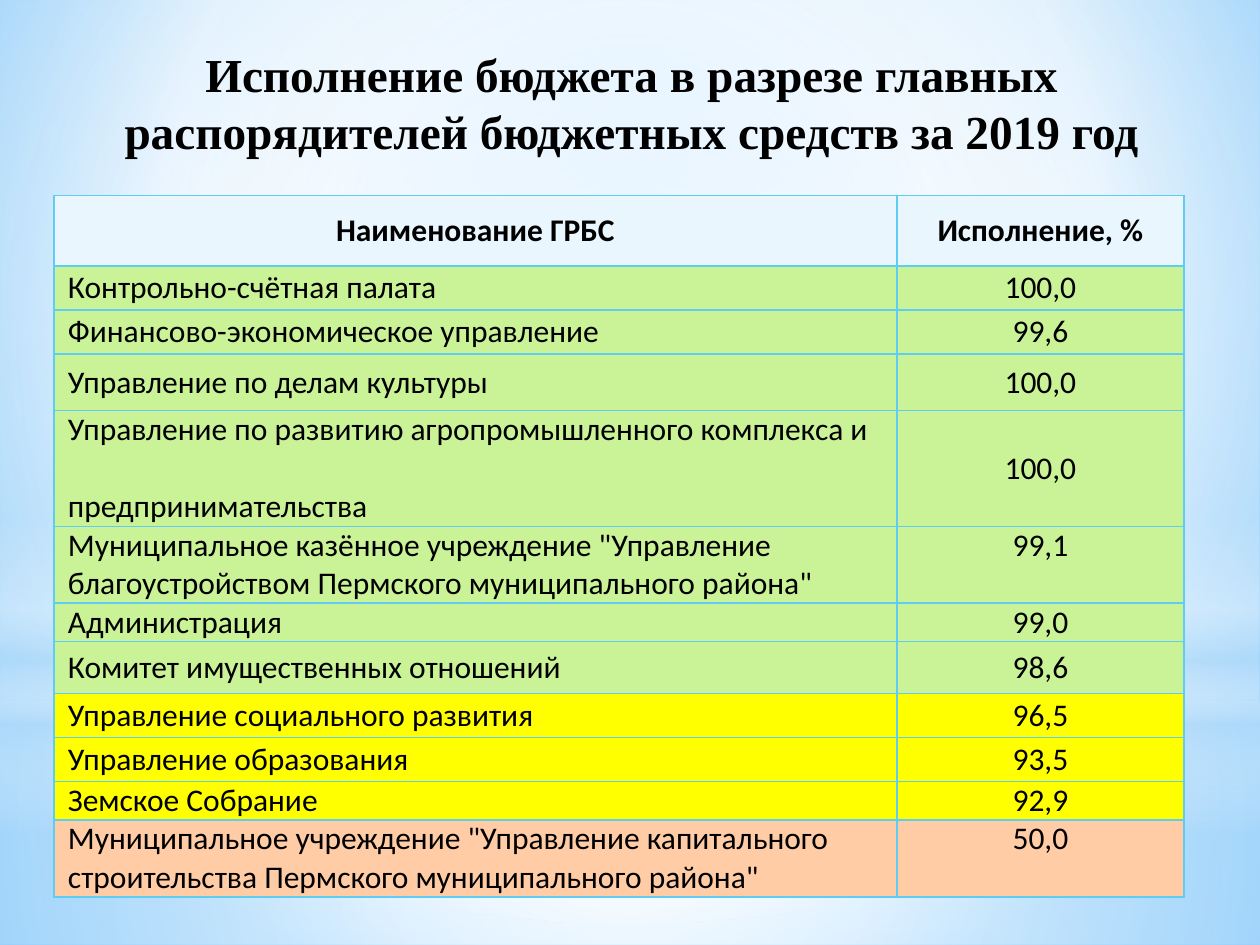
from lxml import etree
from pptx import Presentation
from pptx.dml.color import RGBColor
from pptx.enum.shapes import MSO_SHAPE as Shape
from pptx.enum.text import MSO_ANCHOR as Anchor, PP_ALIGN as Align
from pptx.oxml import parse_xml
from pptx.oxml.ns import nsdecls, qn
from pptx.util import Cm, Pt

BLACK = RGBColor(0x00, 0x00, 0x00)
WHITE = RGBColor(0xFF, 0xFF, 0xFF)
PALE_BLUE = RGBColor(0xB4, 0xDC, 0xFA)
SKY = RGBColor(0x9E, 0xD5, 0xFF)
DEEP_SKY = RGBColor(0x5B, 0xB9, 0xFF)
BORDER = RGBColor(0x5E, 0xCC, 0xF3)
HEADER = RGBColor(0xEA, 0xF6, 0xFD)
GREEN = RGBColor(0xCA, 0xF2, 0x97)
YELLOW = RGBColor(0xFF, 0xFF, 0x00)
ORANGE = RGBColor(0xFF, 0xCC, 0xA6)

CENTRE = (50, 50, 50, 50)
# Gradient stops: position %, colour, opacity %
BACKGROUND = [(0, SKY, 100), (60, WHITE, 100), (100, DEEP_SKY, 100)]
# Shape, top and height in cm, stops, focus (None for a vertical gradient)
LAYERS = [
    (Shape.RECTANGLE, 14.17, 4.88,
     [(0, WHITE, 91), (37, WHITE, 76), (100, PALE_BLUE, 79)], CENTRE),
    (Shape.RECTANGLE, 0, 14.17,
     [(0, WHITE, 89), (48, WHITE, 62), (100, PALE_BLUE, 79)], CENTRE),
    (Shape.RECTANGLE, 10.46, 6.35,
     [(0, WHITE, 0), (29, WHITE, 30), (45, PALE_BLUE, 40),
      (55, WHITE, 26), (65, PALE_BLUE, 60), (100, WHITE, 0)], None),
    (Shape.OVAL, 4.45, 14.17, [(0, WHITE, 100), (56, WHITE, 0)], CENTRE),
]

TITLE = "Исполнение бюджета в разрезе главных распорядителей бюджетных средств за 2019 год"
COLUMNS = (16.99, 5.79)
# Row height in cm, fill, name, value
ROWS = [
    (1.42, HEADER, "Наименование ГРБС", "Исполнение, %"),
    (0.89, GREEN, "Контрольно-счётная палата", "100,0"),
    (0.89, GREEN, "Финансово-экономическое управление", "99,6"),
    (1.14, GREEN, "Управление по делам культуры", "100,0"),
    (2.33, GREEN, "Управление по развитию агропромышленного комплекса и\n"
                  "предпринимательства", "100,0"),
    (1.55, GREEN, 'Муниципальное казённое учреждение "Управление\n'
                  'благоустройством Пермского муниципального района"', "99,1"),
    (0.77, GREEN, "Администрация", "99,0"),
    (1.05, GREEN, "Комитет имущественных отношений", "98,6"),
    (0.89, YELLOW, "Управление социального развития", "96,5"),
    (0.89, YELLOW, "Управление образования", "93,5"),
    (0.77, YELLOW, "Земское Собрание", "92,9"),
    (1.55, ORANGE, 'Муниципальное учреждение "Управление капитального\n'
                   'строительства Пермского муниципального района"', "50,0"),
]
SPACED_ROW = 4
TOP_VALUE_ROWS = (5, 11)


def apply_format(target, values):
    for name, value in values.items():
        setattr(target, name, value)


def set_gradient(fill, properties, stops, focus):
    """Give a fill its stops, with a round or a vertical direction."""
    fill.gradient()
    stop_xml = "".join(
        f'<a:gs pos="{position * 1000}"><a:srgbClr val="{colour}">'
        f'<a:alpha val="{opacity * 1000}"/></a:srgbClr></a:gs>'
        for position, colour, opacity in stops)
    if focus:
        left, top, right, bottom = (side * 1000 for side in focus)
        direction = (f'<a:path path="circle"><a:fillToRect l="{left}" t="{top}" '
                     f'r="{right}" b="{bottom}"/></a:path>')
    else:
        direction = '<a:lin ang="5400000" scaled="0"/>'
    gradient = parse_xml(f'<a:gradFill {nsdecls("a")} rotWithShape="1">'
                         f'<a:gsLst>{stop_xml}</a:gsLst>{direction}</a:gradFill>')
    properties.replace(properties.find(qn("a:gradFill")), gradient)


def add_backdrop(slide, width):
    fill = slide.background.fill
    fill.gradient()
    properties = slide.element.find(".//" + qn("p:bgPr"))
    set_gradient(fill, properties, BACKGROUND, (20, 10, 20, 60))
    for kind, top, height, stops, focus in LAYERS:
        shape = slide.shapes.add_shape(kind, 0, Cm(top), width, Cm(height))
        shape.shadow.inherit = False
        shape.line.fill.background()
        set_gradient(shape.fill, shape.element.spPr, stops, focus)


def add_title(slide, left, top, width, height):
    frame = slide.shapes.add_textbox(left, top, width, height).text_frame
    apply_format(frame, {"word_wrap": True, "margin_top": Cm(0.2),
                         "vertical_anchor": Anchor.TOP})
    paragraph = frame.paragraphs[0]
    apply_format(paragraph, {"text": TITLE, "alignment": Align.CENTER,
                             "line_spacing": Pt(32.6)})
    apply_format(paragraph.font, {"name": "Times New Roman", "size": Pt(27), "bold": True})
    paragraph.font.color.rgb = BLACK


def set_borders(cell):
    properties = cell._tc.get_or_add_tcPr()
    for index, side in enumerate(("lnL", "lnR", "lnT", "lnB")):
        line = etree.Element(qn(f"a:{side}"), w=str(Pt(1)))
        solid = etree.SubElement(line, qn("a:solidFill"))
        etree.SubElement(solid, qn("a:srgbClr"), val=str(BORDER))
        properties.insert(index, line)


def fill_cell(cell, text, colour, is_header, is_name, anchor, gap):
    cell.fill.solid()
    cell.fill.fore_color.rgb = colour
    set_borders(cell)
    indent = Cm(0.28) if is_header or is_name else 0
    apply_format(cell, {"text": text, "vertical_anchor": anchor,
                        "margin_left": indent, "margin_top": 0, "margin_bottom": 0,
                        "margin_right": indent if is_header else 0})
    for index, paragraph in enumerate(cell.text_frame.paragraphs):
        apply_format(paragraph, {
            "alignment": Align.LEFT if is_name and not is_header else Align.CENTER,
            "space_before": gap if index else Pt(0)})
        apply_format(paragraph.font, {"name": "Calibri", "size": Pt(18), "bold": is_header})
        paragraph.font.color.rgb = BLACK


def add_budget_table(slide, left, top):
    height = Cm(sum(row[0] for row in ROWS))
    table = slide.shapes.add_table(len(ROWS), len(COLUMNS), left, top,
                                   Cm(sum(COLUMNS)), height).table
    for column, width in zip(table.columns, COLUMNS):
        column.width = Cm(width)
    for row_index, (row_height, colour, *texts) in enumerate(ROWS):
        table.rows[row_index].height = Cm(row_height)
        gap = Pt(22) if row_index == SPACED_ROW else Pt(0)
        for column_index, text in enumerate(texts):
            is_name = column_index == 0
            at_top = row_index in TOP_VALUE_ROWS and not is_name
            fill_cell(table.cell(row_index, column_index), text, colour,
                      row_index == 0, is_name,
                      Anchor.TOP if at_top else Anchor.MIDDLE, gap)


def main():
    presentation = Presentation()
    apply_format(presentation, {"slide_width": Cm(25.4), "slide_height": Cm(19.05)})
    slide = presentation.slides.add_slide(presentation.slide_layouts[6])
    add_backdrop(slide, presentation.slide_width)
    add_title(slide, Cm(1.3), Cm(0.71), Cm(22.86), Cm(3.18))
    add_budget_table(slide, Cm(1.09), Cm(3.94))
    presentation.save("out.pptx")


if __name__ == "__main__":
    main()
